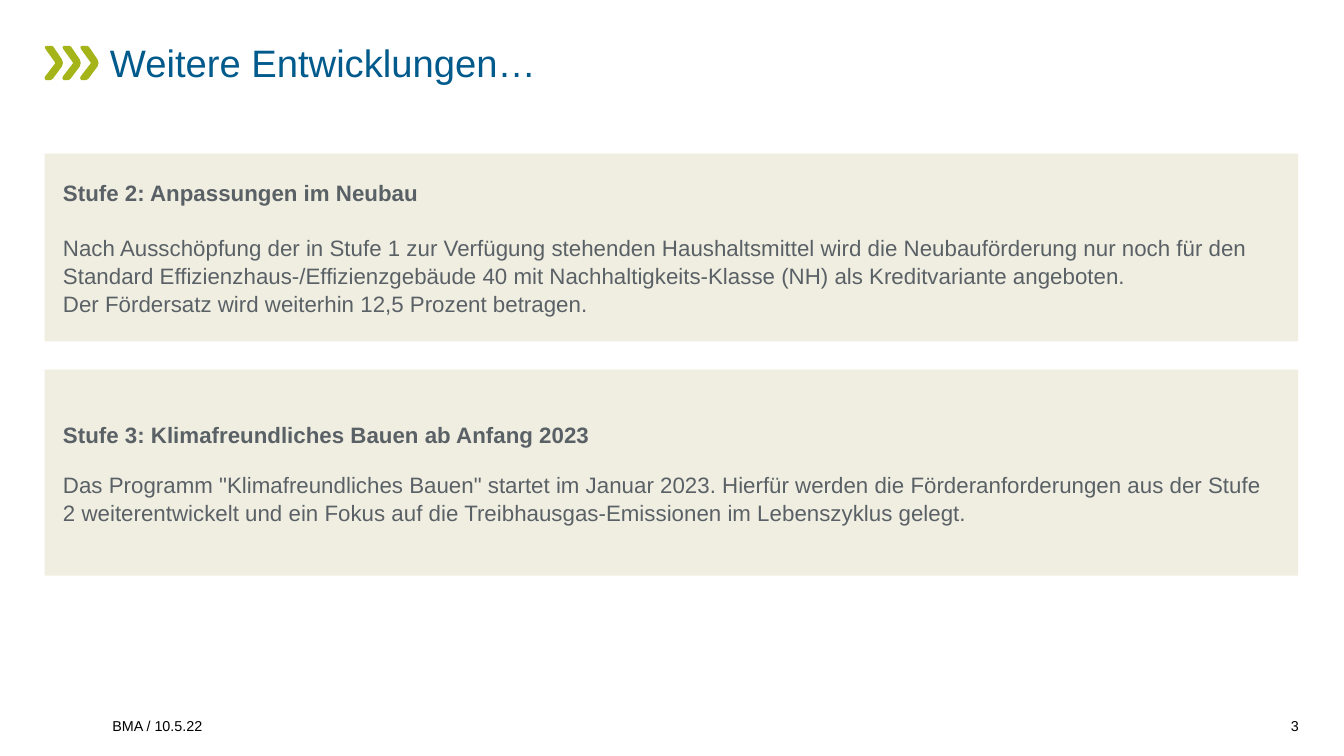
from dataclasses import dataclass, field
from typing import Any

from pptx import Presentation
from pptx.dml.color import RGBColor
from pptx.enum.shapes import MSO_SHAPE
from pptx.enum.text import MSO_ANCHOR, PP_ALIGN
from pptx.slide import Slide
from pptx.text.text import TextFrame
from pptx.util import Pt

COLORS = {
    "background": "FFFFFF",
    "chevron": "A4B419",
    "title": "005A8C",
    "panel": "F0EEE1",
    "body": "5A6166",
    "footer": "000000",
}
MARGIN_LEFT = 28.1
PANEL_WIDTH = 787.7
CHEVRON_COUNT = 3
CHEVRON_TOP = 28.8
CHEVRON_PITCH = 11.16
CHEVRON_OUTLINE = [
    (1.4, 0), (0.4, 0.4), (0.1, 1), (0.6, 2.2), (6.5, 10.4), (6.5, 11.2),
    (0.2, 19.4), (0, 20.6), (0.7, 21.6), (3.6, 21.6), (5, 20.9), (10.9, 13),
    (11.5, 10.8), (10.9, 8.6), (5.6, 0.8), (4.9, 0.2), (3.8, 0),
]


@dataclass
class Line:
    text: str
    size: float
    color: str
    bold: bool = False
    formats: dict[str, Any] = field(default_factory=dict)
    indent: float = 0


@dataclass
class Label:
    left: float
    top: float
    width: float
    height: float
    anchor: MSO_ANCHOR
    line: Line


@dataclass
class Panel:
    top: float
    height: float
    gap: float
    heading: str
    body: list[str]


LABELS = [
    Label(39.6, 26.6, 776.9, 29.5, MSO_ANCHOR.TOP,
          Line("Weitere Entwicklungen…", 24, "title", formats={"line_spacing": 0.95}, indent=29.5)),
    Label(70.6, 441.4, 712.8, 20.2, MSO_ANCHOR.BOTTOM, Line("BMA / 10.5.22", 9, "footer")),
    Label(787, 441.4, 29.2, 20.2, MSO_ANCHOR.BOTTOM,
          Line("3", 9, "footer", formats={"alignment": PP_ALIGN.RIGHT})),
]
PANELS = [
    Panel(96.6, 118, 16.9, "Stufe 2: Anpassungen im Neubau", [
        "Nach Ausschöpfung der in Stufe 1 zur Verfügung stehenden Haushaltsmittel wird die "
        "Neubauförderung nur noch für den Standard Effizienzhaus-/Effizienzgebäude 40 mit "
        "Nachhaltigkeits-Klasse (NH) als Kreditvariante angeboten.",
        "Der Fördersatz wird weiterhin 12,5 Prozent betragen.",
    ]),
    Panel(232.4, 129.5, 14, "Stufe 3: Klimafreundliches Bauen ab Anfang 2023", [
        'Das Programm "Klimafreundliches Bauen" startet im Januar 2023. Hierfür werden die '
        "Förderanforderungen aus der Stufe 2 weiterentwickelt und ein Fokus auf die "
        "Treibhausgas-Emissionen im Lebenszyklus gelegt.",
    ]),
]


def color(name: str) -> RGBColor:
    return RGBColor.from_string(COLORS[name])


def apply(target: Any, formats: dict[str, Any]) -> None:
    for name, value in formats.items():
        setattr(target, name, value)


def paint(shape: Any, fill: str) -> None:
    shape.shadow.inherit = False
    shape.fill.solid()
    shape.fill.fore_color.rgb = color(fill)
    shape.line.fill.background()


def write(frame: TextFrame, lines: list[Line], anchor: MSO_ANCHOR,
          inset_x: float = 0, inset_y: float = 0) -> None:
    apply(frame, {
        "word_wrap": True, "vertical_anchor": anchor,
        "margin_left": Pt(inset_x), "margin_right": Pt(inset_x),
        "margin_top": Pt(inset_y), "margin_bottom": Pt(inset_y),
    })
    for index, line in enumerate(lines):
        paragraph = frame.add_paragraph() if index else frame.paragraphs[0]
        if line.indent:
            paragraph._p.get_or_add_pPr().set("indent", str(Pt(line.indent)))
        apply(paragraph, {"alignment": PP_ALIGN.LEFT} | line.formats)
        run = paragraph.add_run()
        run.text = line.text
        apply(run.font, {"name": "Arial", "size": Pt(line.size), "bold": line.bold})
        run.font.color.rgb = color(line.color)


def add_chevron(slide: Slide, left: float) -> None:
    points = [(Pt(left + x), Pt(CHEVRON_TOP + y)) for x, y in CHEVRON_OUTLINE]
    builder = slide.shapes.build_freeform(*points[0])
    builder.add_line_segments(points[1:], close=True)
    paint(builder.convert_to_shape(), "chevron")


def add_label(slide: Slide, label: Label) -> None:
    box = slide.shapes.add_textbox(
        Pt(label.left), Pt(label.top), Pt(label.width), Pt(label.height))
    write(box.text_frame, [label.line], label.anchor)


def add_panel(slide: Slide, panel: Panel) -> None:
    shape = slide.shapes.add_shape(
        MSO_SHAPE.RECTANGLE, Pt(MARGIN_LEFT), Pt(panel.top), Pt(PANEL_WIDTH), Pt(panel.height))
    paint(shape, "panel")
    spacing = {"line_spacing": 1.05}
    heading = Line(panel.heading, 14, "body", True, spacing | {"space_after": Pt(panel.gap)})
    body = [Line(text, 14, "body", formats=spacing) for text in panel.body]
    write(shape.text_frame, [heading, *body], MSO_ANCHOR.MIDDLE, 11.5, 8.6)


def main() -> None:
    presentation = Presentation()
    presentation.slide_width = Pt(844.6)
    presentation.slide_height = Pt(475.2)
    slide = presentation.slides.add_slide(presentation.slide_layouts[6])
    slide.background.fill.solid()
    slide.background.fill.fore_color.rgb = color("background")
    for index in range(CHEVRON_COUNT):
        add_chevron(slide, MARGIN_LEFT + index * CHEVRON_PITCH)
    for label in LABELS:
        add_label(slide, label)
    for panel in PANELS:
        add_panel(slide, panel)
    presentation.save("out.pptx")


if __name__ == "__main__":
    main()
